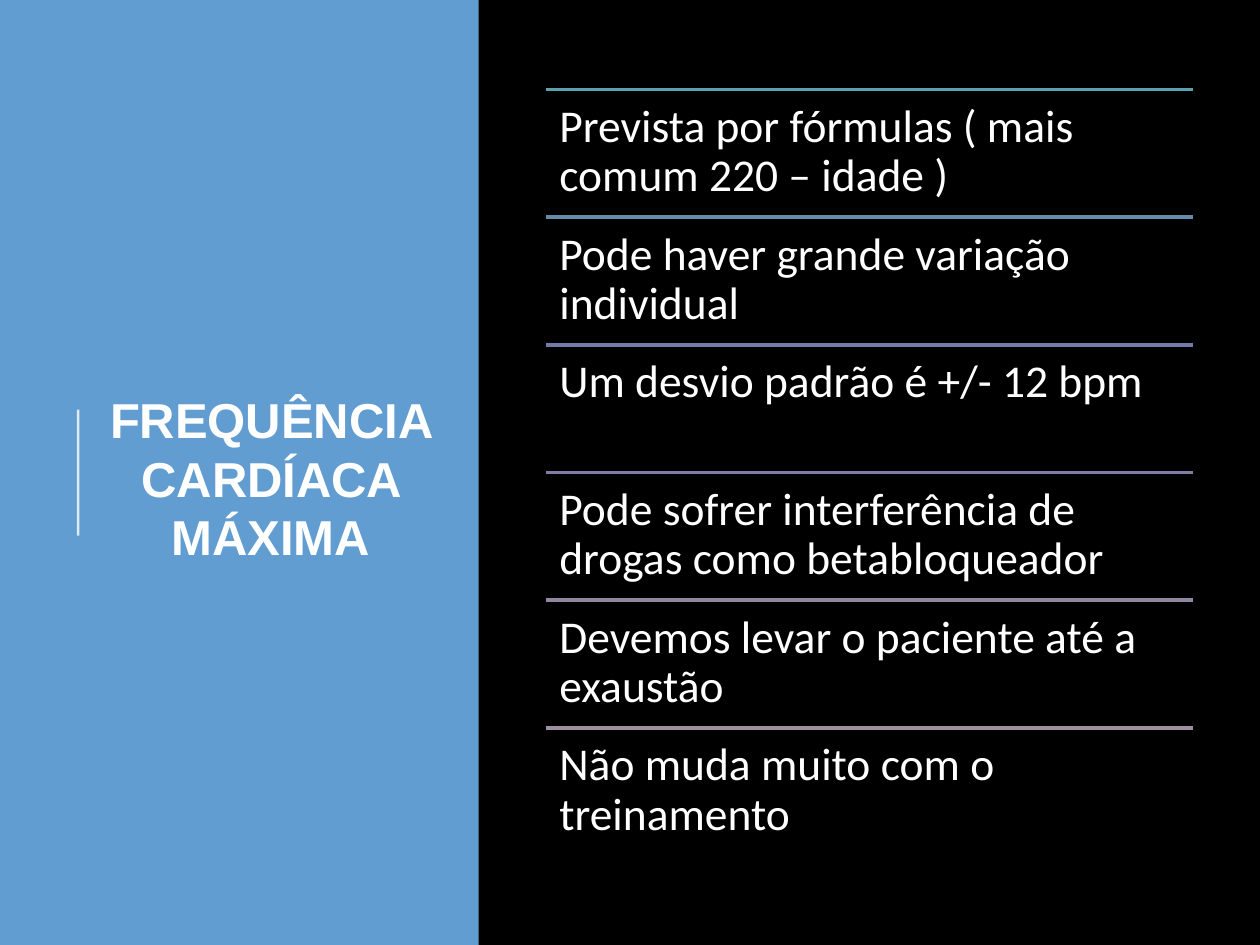
from dataclasses import dataclass

from lxml import etree
from pptx import Presentation
from pptx.dml.color import RGBColor
from pptx.enum.shapes import MSO_CONNECTOR, MSO_SHAPE
from pptx.enum.text import MSO_ANCHOR, PP_ALIGN
from pptx.oxml.ns import qn
from pptx.util import Inches, Pt

STRAIGHT = MSO_CONNECTOR.STRAIGHT
RECTANGLE = MSO_SHAPE.RECTANGLE
MIDDLE, TOP = MSO_ANCHOR.MIDDLE, MSO_ANCHOR.TOP
CENTER, LEFT = PP_ALIGN.CENTER, PP_ALIGN.LEFT


@dataclass(frozen=True)
class Theme:
    background: str = "000000"
    panel: str = "629DD1"
    text: str = "FFFFFF"
    title_font: str = "Arial"
    title_size: int = 28
    body_font: str = "Calibri"
    body_size: int = 26


theme = Theme()

TITLE = "FREQUÊNCIA CARDÍACA MÁXIMA"
ROWS = [
    ("Prevista por fórmulas ( mais comum 220 – idade )", "5AA2AE"),
    ("Pode haver grande variação individual", "668AAA"),
    ("Um desvio padrão é +/- 12 bpm", "717BA7"),
    ("Pode sofrer interferência de drogas como betabloqueador", "827CA4"),
    ("Devemos levar o paciente até a exaustão", "9386A2"),
    ("Não muda muito com o treinamento", "9D90A0"),
]
LIST_LEFT, LIST_TOP, LIST_WIDTH, LIST_HEIGHT = 4.33, 0.71, 5.14, 6.08
ROW_HEIGHT = LIST_HEIGHT / len(ROWS)


def add_line(start, end, color, width):
    line = page.shapes.add_connector(STRAIGHT, *map(Inches, start + end))
    line.line.color.rgb = RGBColor.from_string(color)
    line.line.width = Pt(width)
    etree.SubElement(line._element.spPr, qn("a:effectLst"))
    return line


def add_text(text, bounds, inset, anchor, alignment):
    """Add a wrapped text box and return its paragraph for styling."""
    box = page.shapes.add_textbox(*map(Inches, bounds))
    frame = box.text_frame
    frame.word_wrap = True
    frame.vertical_anchor = anchor
    frame.margin_left = frame.margin_right = Inches(inset)
    frame.margin_top = frame.margin_bottom = Inches(inset)
    para = frame.paragraphs[0]
    para.text = text
    para.alignment = alignment
    para.font.color.rgb = RGBColor.from_string(theme.text)
    return para


deck = Presentation()
deck.slide_width, deck.slide_height = Inches(10), Inches(7.5)
page = deck.slides.add_slide(deck.slide_layouts[6])
page.background.fill.solid()
page.background.fill.fore_color.rgb = RGBColor.from_string(theme.background)

# Title panel
panel = page.shapes.add_shape(RECTANGLE, 0, 0, Inches(3.8), deck.slide_height)
panel.shadow.inherit = False
panel.fill.solid()
panel.fill.fore_color.rgb = RGBColor.from_string(theme.panel)
panel.line.fill.background()

title = add_text(TITLE, (0.77, 0.78, 2.76, 6.02), 0.05, MIDDLE, CENTER)
title.font.name = theme.title_font
title.font.size = Pt(theme.title_size)
title.font.bold = True

accent = add_line((0.62, 4.25), (0.62, 3.25), theme.text, 1.5)
accent_color = accent.line._ln.find(".//" + qn("a:srgbClr"))
etree.SubElement(accent_color, qn("a:alpha"), val="80000")

# Ruled list
for index, (text, color) in enumerate(ROWS):
    top = LIST_TOP + index * ROW_HEIGHT
    add_line((LIST_LEFT, top), (LIST_LEFT + LIST_WIDTH, top), color, 2)
    para = add_text(text, (LIST_LEFT, top, LIST_WIDTH, ROW_HEIGHT), 0.11, TOP, LEFT)
    para.font.name = theme.body_font
    para.font.size = Pt(theme.body_size)
    para.line_spacing = 0.9

deck.save("out.pptx")
